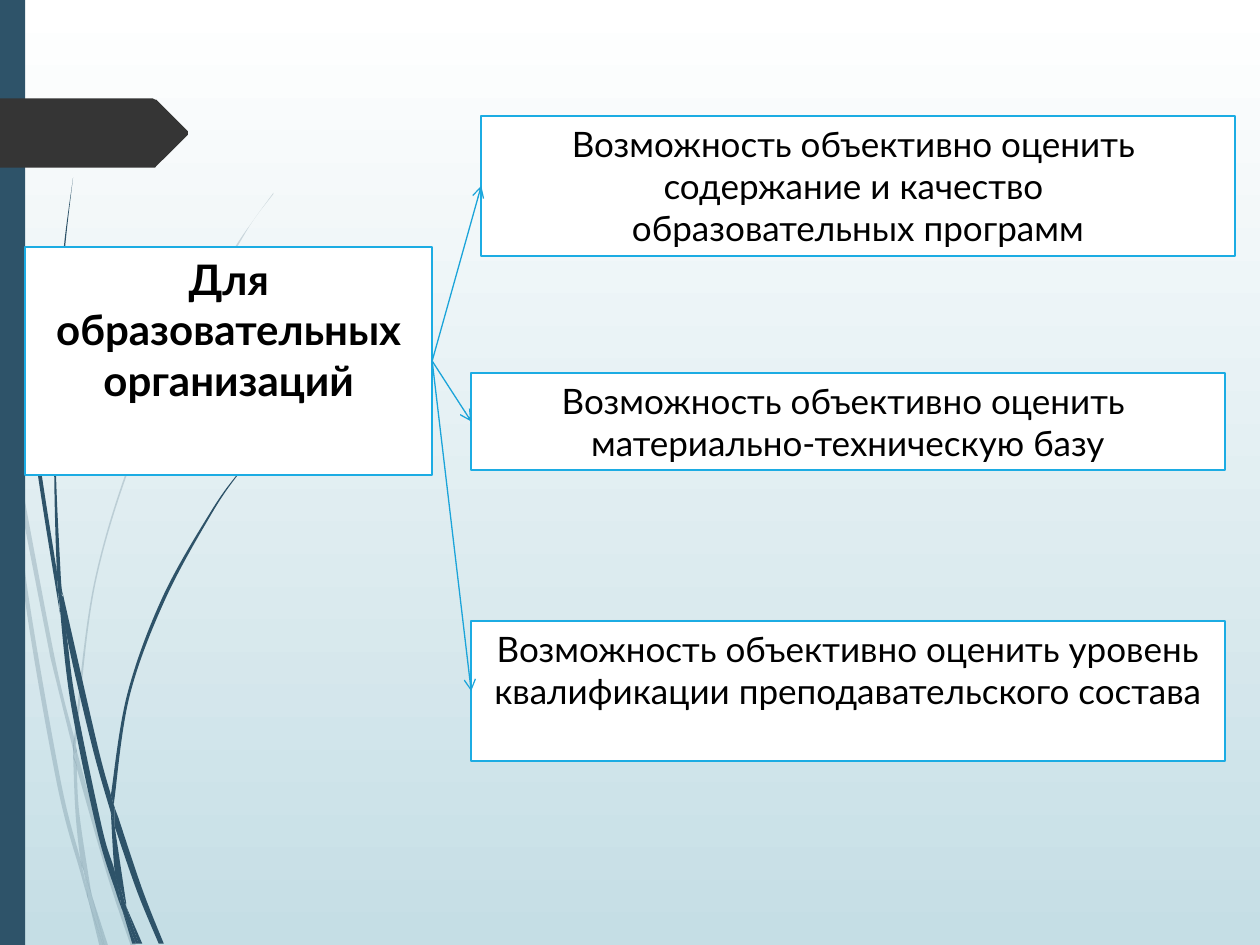
from lxml.etree import SubElement
from pptx import Presentation
from pptx.dml.color import RGBColor
from pptx.enum.shapes import MSO_CONNECTOR, MSO_SHAPE
from pptx.enum.text import MSO_ANCHOR, MSO_AUTO_SIZE, PP_ALIGN
from pptx.oxml.ns import qn
from pptx.util import Inches, Pt

COLORS = {
    "white": "FFFFFF", "mist": "C5DEE5", "navy": "2E5369", "charcoal": "353535",
    "border": "1CACE3", "arrow": "1BA4D9", "text": "000000",
}
FONT = "Lato"

# Each outline is a list of smooth edges, in inches, joined by straight lines.
PALE_BLADES = [
    [[(0.08, 3.5), (0.06, 3.22), (0, 2.82)], [(0, 2.99), (0.07, 3.44), (0.08, 3.5)]],
    [[(0.4, 5.22), (0.59, 5.99)], [(0.59, 5.86), (0.43, 5.2), (0.1, 3.45)],
     [(0.1, 3.45), (0.12, 3.76), (0.4, 5.22)]],
    [[(0.64, 6.07), (0.61, 5.96)], [(0.61, 6.1), (0.85, 6.94), (1.04, 7.51)],
     [(1.08, 7.51), (0.88, 6.92), (0.64, 6.07)]],
    [[(0.83, 7.51), (0.86, 7.51)], [(0.73, 7.11), (0.83, 7.51)]],
    [[(0.08, 3.5), (0.19, 4.7), (0.45, 6.21), (0.64, 6.93), (0.7, 7.14)],
     [(0.69, 7.07), (0.64, 6.83), (0.48, 6.19), (0.22, 4.69), (0.12, 3.76), (0.08, 3.5)]],
    [[(0.58, 5.99), (0.6, 6.46), (0.64, 6.83), (0.67, 6.92), (0.73, 7.11)],
     [(0.72, 7.06), (0.63, 6.46), (0.61, 6.1), (0.61, 6.08), (0.58, 5.99)]],
    [[(0.61, 5.96), (0.61, 5.84), (0.76, 4.62), (1.11, 3.49), (1.59, 2.45), (1.87, 1.98),
      (2.01, 1.75), (2.17, 1.54)],
     [(2.17, 1.53), (2.01, 1.75), (1.86, 1.97), (1.58, 2.44), (1.1, 3.48), (0.75, 4.61),
      (0.59, 5.84), (0.59, 5.86)]],
    [[(0.7, 7.14), (0.79, 7.51)], [(0.82, 7.51), (0.7, 7.14)]],
    [[(0.61, 6.08), (0.61, 6.1), (0.61, 5.96)], [(0.59, 5.86), (0.58, 5.99), (0.61, 6.08)]],
    [[(0.65, 6.83), (0.69, 7.07), (0.7, 7.14), (0.82, 7.51)],
     [(0.83, 7.51), (0.73, 7.11), (0.67, 6.92), (0.65, 6.83)]],
]
DARK_BLADES = [
    [[(0.02, 0), (0.03, 0.48), (0.05, 1.1), (0.14, 2.33), (0.27, 3.55), (0.46, 4.77),
      (0.47, 4.81)],
     [(0.45, 4.57), (0.45, 4.53), (0.3, 3.55), (0.15, 2.32), (0.06, 1.09), (0.04, 0.48),
      (0.03, 0)]],
    [[(0.5, 4.72), (0.53, 5.05), (0.73, 5.92), (0.88, 6.45)],
     [(0.88, 6.33), (0.88, 6.31), (0.77, 5.9), (0.5, 4.72)]],
    [[(0.94, 6.49), (0.91, 6.41)], [(0.91, 6.56), (1.09, 7.08), (1.26, 7.49)],
     [(1.3, 7.49), (1.13, 7.06), (0.94, 6.49)]],
    [[(0.47, 4.77), (0.56, 5.57), (0.77, 6.59), (0.92, 7.08), (0.97, 7.22)],
     [(0.96, 7.17), (0.91, 6.91), (0.81, 6.57), (0.6, 5.56), (0.53, 5.05), (0.47, 4.77)]],
    [[(0.5, 4.72), (0.48, 4.53), (0.44, 3.49), (0.48, 2.45), (0.52, 1.93), (0.58, 1.41)],
     [(0.58, 1.41), (0.51, 1.93), (0.47, 2.45), (0.43, 3.49), (0.45, 4.49), (0.49, 4.72)]],
    [[(1, 7.19), (1.1, 7.49)], [(1.13, 7.49), (1, 7.19)]],
    [[(0.45, 4.49), (0.45, 4.53), (0.47, 4.77), (0.53, 5.05)],
     [(0.5, 4.72), (0.49, 4.72), (0.45, 4.49)]],
    [[(0.91, 6.41), (0.91, 6.33), (1.03, 5.52), (1.31, 4.76), (1.69, 4.06), (1.91, 3.74),
      (2.03, 3.59), (2.16, 3.44)],
     [(2.15, 3.44), (2.03, 3.58), (1.91, 3.73), (1.68, 4.05), (1.29, 4.74), (1.01, 5.51),
      (0.88, 6.31)]],
    [[(0.97, 7.22), (1.05, 7.49)], [(1.08, 7.49), (0.97, 7.22)]],
    [[(0.88, 6.45), (0.91, 6.91), (0.96, 7.06), (1, 7.19)],
     [(1, 7.16), (0.91, 6.56), (0.9, 6.51), (0.88, 6.45)]],
    [[(0.88, 6.45), (0.9, 6.51), (0.91, 6.56)], [(0.91, 6.41), (0.88, 6.31)],
     [(0.88, 6.33), (0.88, 6.45)]],
    [[(0.91, 6.91), (0.96, 7.17), (0.97, 7.22), (1.08, 7.49)],
     [(1.1, 7.49), (1, 7.19), (0.96, 7.06), (0.91, 6.91)]],
]
TAG = [[(1.49, 1.07)], [(1.24, 1.32), (1.23, 1.33), (1.21, 1.33)], [(1.11, 1.33)],
       [(0, 1.33)], [(0, 0.78)], [(1.11, 0.78)], [(1.21, 0.78), (1.23, 0.79), (1.24, 0.79)],
       [(1.49, 1.04), (1.49, 1.07)]]

OPPORTUNITY = "Возможность объективно оценить "
BENEFITS = [
    (3.82, 0.92, 1.11, [OPPORTUNITY, "содержание и качество ", "образовательных программ"]),
    (3.74, 2.96, 0.77, [OPPORTUNITY, "материально-техническую базу"]),
    (3.74, 4.93, 1.11, [OPPORTUNITY + "уровень квалификации преподавательского состава"]),
]


def rgb(name):
    return RGBColor.from_string(COLORS[name])


def edge_controls(edge):
    """Give Catmull-Rom control points for each segment of an edge."""
    padded = [edge[0], *edge, edge[-1]]
    for before, start, end, after in zip(padded, padded[1:], padded[2:], padded[3:]):
        yield ([b + (c - a) / 6 for a, b, c in zip(before, start, end)],
               [c - (d - b) / 6 for b, c, d in zip(start, end, after)])


def fill_flat(shape, color):
    shape.shadow.inherit = False
    shape.fill.solid()
    shape.fill.fore_color.rgb = rgb(color)
    shape.line.fill.background()


def bend_segments(shape, edges):
    """Turn the straight segments inside each edge into cubic curves."""
    controls = [pair for edge in edges for pair in [(), *edge_controls(edge)]][1:]
    segments = list(shape._element.spPr.iter(qn("a:lnTo")))
    for segment, pair in zip(segments, controls):
        if pair:
            segment.tag = qn("a:cubicBezTo")
        for index, (x, y) in enumerate(pair):
            point = segment.makeelement(qn("a:pt"), {
                "x": str(Inches(x) - shape.left), "y": str(Inches(y) - shape.top)})
            segment.insert(index, point)


def add_outline(shapes, edges, color, opacity=100):
    points = [(Inches(x), Inches(y)) for edge in edges for x, y in edge]
    builder = shapes.build_freeform(*points[0])
    builder.add_line_segments(points[1:], close=True)
    shape = builder.convert_to_shape()
    bend_segments(shape, edges)
    fill_flat(shape, color)
    if opacity < 100:
        color_element = shape._element.spPr.find(qn("a:solidFill"))[0]
        SubElement(color_element, qn("a:alpha"), val=str(opacity * 1000))


def add_blades(slide, blades, opacity=100):
    group = slide.shapes.add_group_shape()
    for edges in blades:
        add_outline(group.shapes, edges, "navy", opacity)


def add_decoration(slide):
    fill = slide.background.fill
    fill.gradient()
    fill.gradient_angle = 270
    for stop, color in zip(fill.gradient_stops, ("white", "mist")):
        stop.color.rgb = rgb(color)
    add_blades(slide, PALE_BLADES, opacity=20)
    add_blades(slide, DARK_BLADES)
    band = slide.shapes.add_shape(MSO_SHAPE.RECTANGLE, 0, 0, Inches(0.2), Inches(7.5))
    fill_flat(band, "navy")
    add_outline(slide.shapes, TAG, "charcoal")


def format_box(shape, lines, size, bold=False):
    shape.fill.solid()
    shape.fill.fore_color.rgb = rgb("white")
    shape.line.color.rgb = rgb("border")
    shape.line.width = Pt(1.25)
    frame = shape.text_frame
    frame.text = "\n".join(lines)
    frame.word_wrap = True
    frame.auto_size = MSO_AUTO_SIZE.NONE
    frame.vertical_anchor = MSO_ANCHOR.TOP
    for paragraph in frame.paragraphs:
        paragraph.alignment = PP_ALIGN.CENTER
        font = paragraph.font
        font.name, font.size, font.bold = FONT, Pt(size), bold
        font.color.rgb = rgb("text")


def place_title(slide):
    title = slide.shapes.title
    title.left, title.top = Inches(0.2), Inches(1.96)
    title.width, title.height = Inches(3.23), Inches(1.81)
    format_box(title, ["Для образовательных организаций"], 24, bold=True)
    slide.shapes._spTree.append(title._element)  # in front of the decoration
    return title


def add_benefit(slide, left, top, height, lines):
    box = slide.shapes.add_shape(MSO_SHAPE.RECTANGLE, Inches(left), Inches(top),
                                 Inches(5.98), Inches(height))
    box.shadow.inherit = False
    format_box(box, lines, 20)
    return box


def add_arrow(slide, source, target):
    """Point from the right side of source to the left side of target."""
    arrow = slide.shapes.add_connector(MSO_CONNECTOR.STRAIGHT, 0, 0, 0, 0)
    arrow.begin_connect(source, 3)
    arrow.end_connect(target, 1)
    arrow.line.color.rgb = rgb("arrow")
    arrow.line.width = Pt(0.75)
    SubElement(arrow.line._get_or_add_ln(), qn("a:tailEnd"), type="arrow")
    SubElement(arrow._element.spPr, qn("a:effectLst"))


def main():
    presentation = Presentation()
    presentation.slide_width, presentation.slide_height = Inches(10), Inches(7.5)
    slide = presentation.slides.add_slide(presentation.slide_layouts[5])
    add_decoration(slide)
    title = place_title(slide)
    boxes = [add_benefit(slide, *benefit) for benefit in BENEFITS]
    for box in boxes:
        add_arrow(slide, title, box)
    presentation.save("out.pptx")


if __name__ == "__main__":
    main()
